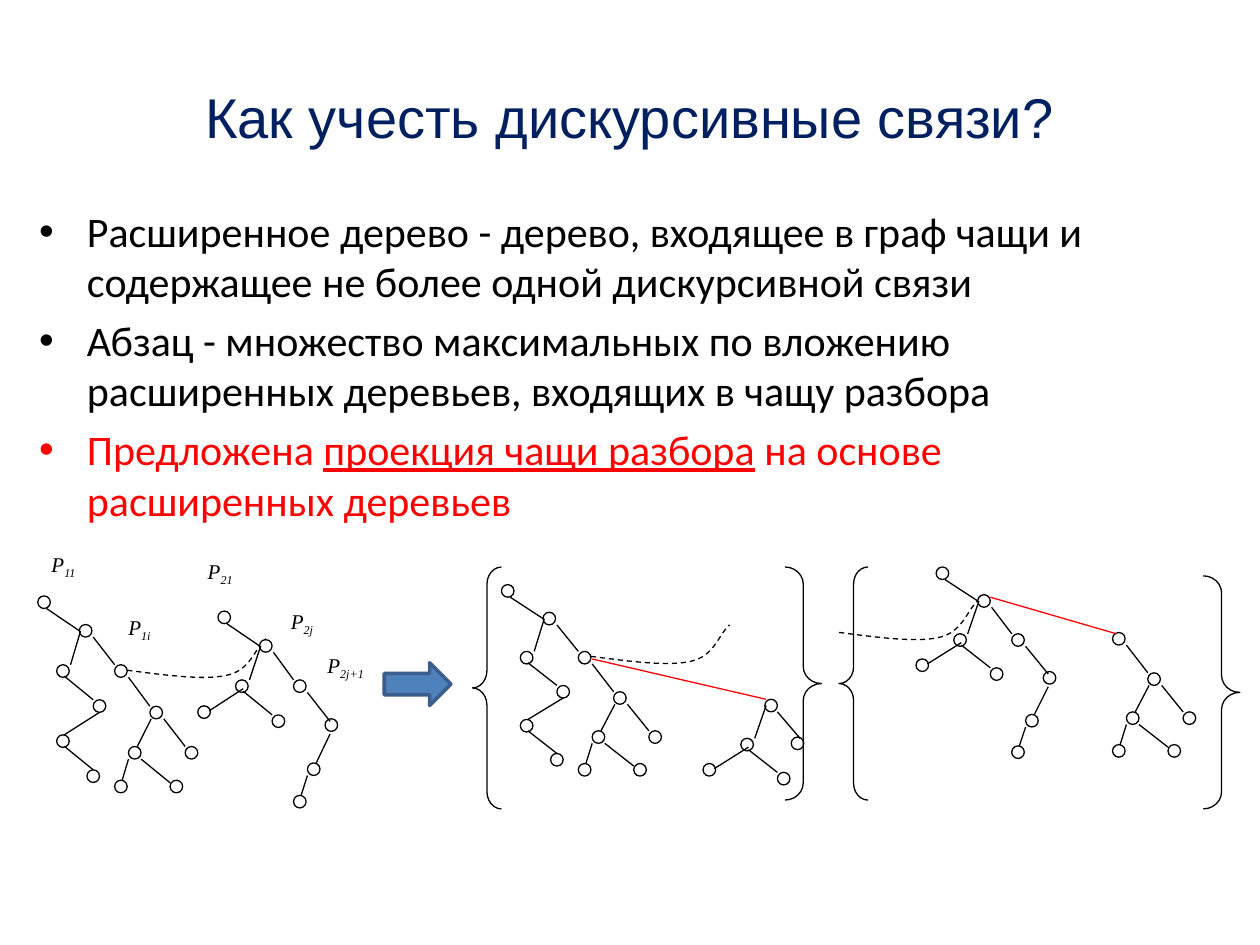
from lxml.etree import SubElement
from pptx import Presentation
from pptx.dml.color import RGBColor
from pptx.enum.dml import MSO_LINE
from pptx.enum.shapes import MSO_CONNECTOR, MSO_SHAPE
from pptx.enum.text import MSO_ANCHOR, PP_ALIGN
from pptx.oxml.ns import qn
from pptx.util import Inches, Pt

COLORS = {"title": "002060", "ink": "000000", "accent": "FF0000", "paper": "FFFFFF",
          "arrow": "4F81BD", "arrow_edge": "3A5F8C"}
RING = 0.1
STRETCH = 1.03
JOINTS = {
    "root": ((0.07, 0.1), (0, 0.05)), "left": ((0.01, 0.05), (0.11, 0)),
    "right": ((0.11, 0.1), (0, 0)), "down": ((0.06, 0.09), (0, 0)),
    "fork": ((0.01, 0.1), (0.07, 0)), "back": ((0.06, 0), (0.05, 0.1)),
    "tail": ((0.06, 0.09), (0.05, 0)), "twig": ((0.1, 0.1), (0, 0.02)),
    "leaf": ((0, 0.1), (0.06, 0)), "side": ((0.09, 0.04), (0.06, 0.07)),
    "bend": ((0.04, 0.12), (0.07, 0)), "step": ((0.11, 0.1), (0.04, 0.02)),
    "cut": ((0.1, 0.1), (0.07, 0.01)),
}
FIRST_TREE = {
    "nodes": {"a": (0, 0), "b": (0.33, 0.22), "c": (0.15, 0.53), "d": (0.61, 0.53),
              "e": (0.44, 0.8), "f": (0.89, 0.85), "g": (0.72, 1.16), "h": (1.17, 1.16),
              "i": (0.15, 1.07), "j": (1.05, 1.42), "k": (0.61, 1.42), "l": (0.39, 1.34)},
    "edges": [("a", "b", "root"), ("b", "c", "left"), ("b", "d", "right"), ("c", "e", "down"),
              ("d", "f", "right"), ("f", "g", "fork"), ("f", "h", "right"), ("i", "e", "back"),
              ("i", "l", "tail"), ("g", "j", "twig"), ("g", "k", "leaf")],
}
SECOND_TREE = {
    "nodes": {"a": (0, 0), "b": (0.33, 0.22), "c": (0.14, 0.53), "d": (0.6, 0.53),
              "e": (0.43, 0.8), "f": (0.85, 0.83), "g": (0.71, 1.17), "h": (-0.16, 0.73),
              "i": (0.6, 1.42), "x": (0.54, 0.52)},
    "edges": [("a", "b", "root"), ("b", "c", "left"), ("b", "d", "right"), ("c", "e", "down"),
              ("h", "c", "side"), ("d", "f", "step"), ("f", "g", "bend"), ("g", "i", "leaf"),
              ("b", "x", "cut")],
}
LINK = [(0, 0), (0.31, 0.04), (0.61, 0.08), (0.79, 0.04), (0.98, 0), (1.01, -0.17), (1.1, -0.25)]


def color(name):
    """Return the named colour."""
    return RGBColor.from_string(COLORS[name])


def add_span(para, text, font, size, ink):
    """Append a formatted run of text."""
    span = para.add_run()
    span.text = text
    span.font.name, span.font.size = font, Pt(size)
    span.font.color.rgb = color(ink)
    return span


def style_shape(shape, fill, edge):
    """Set fill and outline and drop the shadow."""
    shape.shadow.inherit = False
    for paint, name in ((shape.fill, fill), (shape.line.fill, edge)):
        if name:
            paint.solid()
            paint.fore_color.rgb = color(name)
        else:
            paint.background()
    if edge:
        shape.line.width = Pt(0.75)


def add_shape(shapes, kind, box, fill=None, edge=None):
    """Add a preset shape in a box measured in inches."""
    shape = shapes.add_shape(kind, *map(Inches, box))
    style_shape(shape, fill, edge)
    return shape


def add_line(shapes, start, end, ink="ink"):
    """Add a thin straight connector."""
    line = shapes.add_connector(MSO_CONNECTOR.STRAIGHT, *map(Inches, (*start, *end)))
    line.line.color.rgb = color(ink)
    line.line.width = Pt(0.75)
    SubElement(line._element.spPr, qn("a:effectLst"))


def add_link(shapes, left, top):
    """Add the dashed discourse curve that starts at the given point."""
    points = [(Inches(left + x), Inches(top + y)) for x, y in LINK]
    builder = shapes.build_freeform(*points[0], scale=1.0)
    builder.add_line_segments(points[1:], close=False)
    shape = builder.convert_to_shape()
    style_shape(shape, None, "ink")
    shape.line.dash_style = MSO_LINE.DASH
    outline = next(shape._element.iter(qn("a:path")))
    segments = outline.findall(qn("a:lnTo"))
    for first in range(0, len(segments), 3):
        curve = SubElement(outline, qn("a:cubicBezTo"))
        for segment in segments[first:first + 3]:
            curve.append(segment[0])
            outline.remove(segment)


def add_tree(shapes, tree, left, top, names, stretch=1):
    """Draw the named nodes of a tree and the edges between them."""
    spots = {name: (left + tree["nodes"][name][0], top + tree["nodes"][name][1] * stretch)
             for name in names}
    for spot in spots.values():
        add_shape(shapes, MSO_SHAPE.OVAL, (*spot, RING, RING), "paper", "ink")
    for parent, child, joint in tree["edges"]:
        if parent in spots and child in spots:
            start, end = [(spots[name][0] + dx, spots[name][1] + dy)
                          for name, (dx, dy) in zip((parent, child), JOINTS[joint])]
            add_line(shapes, start, end)


def add_label(shapes, left, top, index, width=0.48):
    """Add the label P with a subscript index."""
    label = add_shape(shapes, MSO_SHAPE.RECTANGLE, (left, top, width, 0.4), "paper")
    label.text_frame.vertical_anchor = MSO_ANCHOR.TOP
    para = label.text_frame.paragraphs[0]
    para.alignment = PP_ALIGN.LEFT
    for text in ("P", index):
        span = add_span(para, text, "Times New Roman", 12, "ink")
        span.font.italic = True
    span.font._element.set("baseline", "-25000")


def place(holder, box):
    """Move a placeholder into a box and return its text frame."""
    holder.left, holder.top, holder.width, holder.height = map(Inches, box)
    return holder.text_frame


def fill_title(title, box):
    """Place and fill the title."""
    frame = place(title, box)
    frame.vertical_anchor = MSO_ANCHOR.MIDDLE
    frame.paragraphs[0].alignment = PP_ALIGN.CENTER
    add_span(frame.paragraphs[0], "Как учесть дискурсивные связи?", "Arial", 32, "title")


def fill_body(body, box):
    """Place and fill the bullet list."""
    frame = place(body, box)
    items = [
        ("ink", ["Расширенное дерево - дерево, входящее в граф чащи и содержащее "
                 "не более одной дискурсивной связи"]),
        ("ink", ["Абзац - множество максимальных по вложению расширенных деревьев, "
                 "входящих в чащу разбора"]),
        ("accent", ["Предложена ", "проекция чащи разбора", " на основе расширенных деревьев"]),
    ]
    for number, (ink, texts) in enumerate(items):
        para = frame.add_paragraph() if number else frame.paragraphs[0]
        properties = para._p.get_or_add_pPr()
        properties.set("marL", str(Inches(0.38)))
        properties.set("indent", str(-Inches(0.38)))
        for position, text in enumerate(texts):
            add_span(para, text, "Calibri", 24, ink).font.underline = position == 1


def draw_forest(slide, left, top):
    """Draw the two linked parse trees with their labels."""
    shapes = slide.shapes.add_group_shape().shapes
    add_label(shapes, left + 0.01, top, "11")
    add_tree(shapes, FIRST_TREE, left, top + 0.4, "abcdefghijkl", STRETCH)
    add_link(shapes, left + 0.71, top + 0.99)
    add_tree(shapes, SECOND_TREE, left + 1.43, top + 0.52, "abcdefghi", STRETCH)
    for x, y, index in ((0.62, 0.5, "1i"), (1.91, 0.45, "2j"), (1.25, 0.05, "21")):
        add_label(shapes, left + x, top + y, index)
    add_label(shapes, left + 2.2, top + 0.8, "2j+1", 0.56)


def draw_extended(slide, left, top, trees, link, bond, braces):
    """Draw one extended tree: two trees, their link and bond, between braces."""
    shapes = slide.shapes.add_group_shape().shapes
    add_link(shapes, left + link[0], top + link[1])
    for tree, x, y, names in trees:
        add_tree(shapes, tree, left + x, top + y, names)
    add_line(shapes, *[(left + x, top + y) for x, y in bond], "accent")
    kinds = (MSO_SHAPE.LEFT_BRACE, MSO_SHAPE.RIGHT_BRACE)
    for kind, (x, y, width, height, curl) in zip(kinds, braces):
        brace = add_shape(shapes, kind, (left + x, top + y, width, height), edge="ink")
        brace.adjustments[0] = curl


def main():
    """Build the slide and save the deck."""
    deck = Presentation()
    deck.slide_width, deck.slide_height = Inches(10), Inches(7.5)
    slide = deck.slides.add_slide(deck.slide_layouts[1])
    fill_title(slide.shapes.title, (0.5, 0.3, 9, 1.25))
    fill_body(slide.placeholders[1], (0.21, 1.58, 9, 4.95))
    draw_extended(slide, 3.75, 4.5,
                  [(FIRST_TREE, 0.23, 0.14, "abcdefghijkl"), (SECOND_TREE, 1.99, 0.83, "bcehx")],
                  (0.94, 0.71), [(0.95, 0.73), (2.33, 1.05)],
                  [(0, 0, 0.23, 1.92, 0.6), (2.48, 0, 0.29, 1.85, 0.47)])
    draw_extended(slide, 6.66, 4.5,
                  [(SECOND_TREE, 0.77, 0, "abcdefghi"), (FIRST_TREE, 1.56, -0.01, "dfghjk")],
                  (0, 0.52), [(1.2, 0.24), (2.2, 0.53)],
                  [(0, 0, 0.23, 1.85, 0.58), (2.89, 0.07, 0.29, 1.85, 0.47)])
    draw_forest(slide, 0.3, 4.33)
    arrow = add_shape(slide.shapes, MSO_SHAPE.RIGHT_ARROW, (3.05, 5.26, 0.53, 0.34),
                      "arrow", "arrow_edge")
    arrow.line.width = Pt(2)
    deck.save("out.pptx")


if __name__ == "__main__":
    main()
